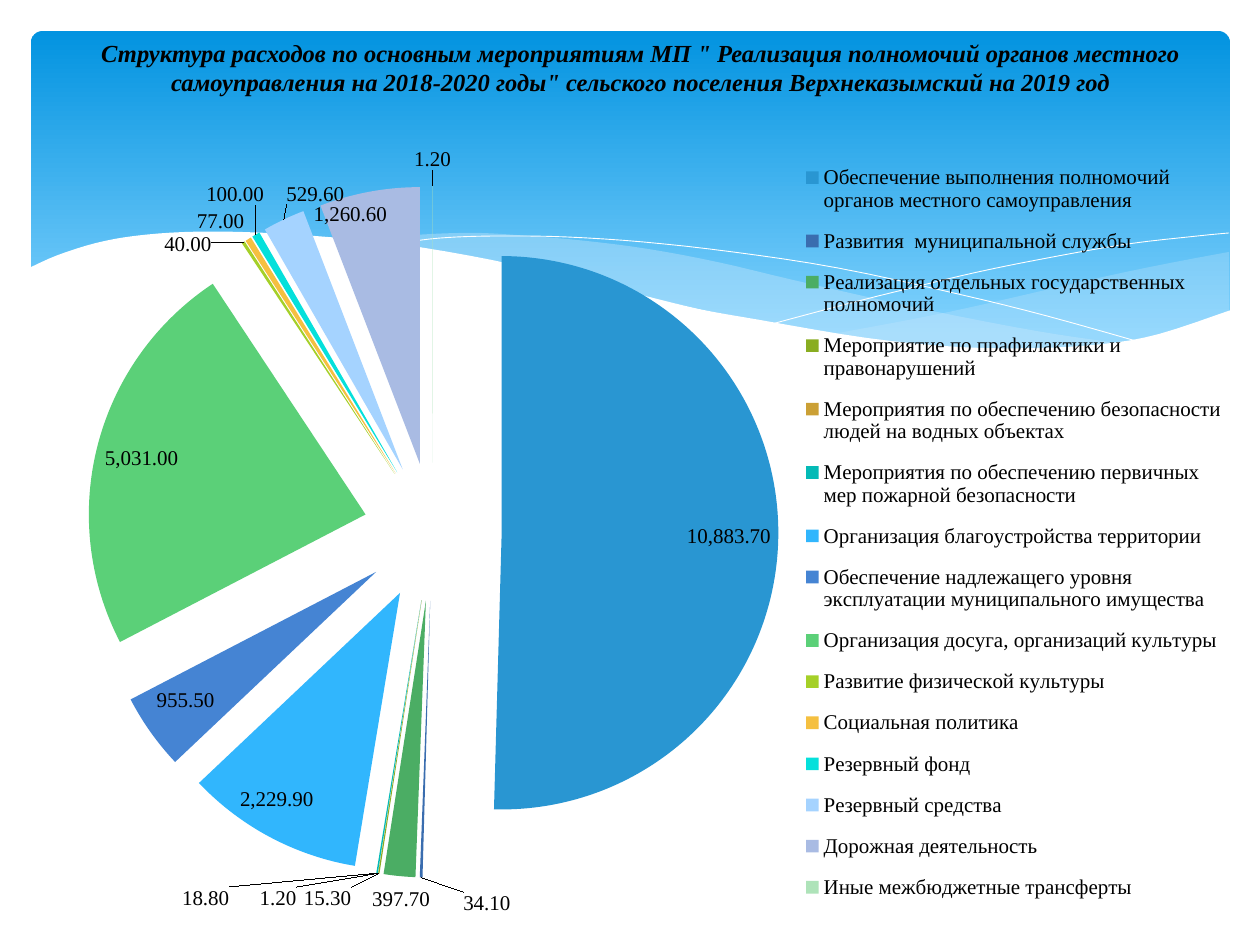
import dataclasses
import pptx
import pptx.chart.data
import pptx.dml.color
import pptx.enum.chart
import pptx.enum.shapes
import pptx.enum.text
import pptx.oxml
import pptx.oxml.ns
import pptx.util

PX = 914400 / 126
COLORS = {
    "top": "0293E0", "low": "83D3FE", "haze": "C6E7FC",
    "white": "FFFFFF", "black": "000000",
}
SERIF = {"name": "Times New Roman", "size": pptx.util.Pt(12)}
HEAD = {"name": "Times New Roman", "size": pptx.util.Pt(14), "bold": True, "italic": True}
FORMAT = "#,##0.00"
CHART = (35, 135, 1201, 794)
PIE = (87, 186, 692, 692)
LEGEND = (800, 148, 428, 770)
TITLE = (
    'Структура расходов по основным мероприятиям МП " Реализация полномочий органов '
    'местного самоуправления на 2018-2020 годы" сельского поселения Верхнеказымский на 2019 год'
)
Points = list[tuple[int, int]]


@dataclasses.dataclass
class Wave:
    curves: list[Points]
    fill: str = ""
    alpha: int = 100


@dataclasses.dataclass
class Slice:
    name: str
    value: float
    color: str
    inside: bool = False
    shift: tuple[int, int] = (0, 0)


WAVES = [
    Wave([[(1229, 252), (1160, 265), (1085, 281), (949, 312), (833, 334)],
          [(833, 334), (906, 343), (969, 348), (1026, 350), (1076, 348), (1120, 342),
           (1160, 335), (1196, 324), (1229, 311)]], "haze", 29),
    Wave([[(1125, 344), (1054, 334), (977, 320), (890, 302), (793, 280), (717, 262),
           (648, 249), (586, 241), (529, 236), (479, 233), (433, 234), (394, 237), (360, 241)],
          [(360, 241), (456, 256), (566, 280), (668, 302), (757, 321), (838, 335),
           (910, 345), (974, 350), (1031, 350), (1080, 349), (1125, 344)]], "haze", 40),
    Wave([[(389, 246), (422, 240), (457, 237), (505, 236), (567, 237), (643, 242),
           (733, 252), (838, 268), (958, 294), (1047, 316), (1143, 343)]]),
    Wave([[(772, 324), (847, 304), (907, 289), (978, 272), (1053, 257), (1128, 244),
           (1198, 236), (1229, 233)]]),
    Wave([[(29, 268), (58, 255), (96, 243), (134, 236), (184, 232), (243, 232), (315, 236),
           (398, 244), (492, 260), (563, 277), (633, 293), (699, 309), (760, 320), (867, 338),
           (959, 347), (1037, 348), (1103, 344), (1159, 334), (1231, 310)],
          [(1231, 415), (29, 415)]], "white"),
]
SLICES = [
    Slice("Обеспечение выполнения полномочий органов местного самоуправления", 10883.7, "2996D2", True),
    Slice("Развития  муниципальной службы", 34.1, "3A6DAF", False, (66, 7)),
    Slice("Реализация отдельных государственных полномочий", 397.7, "4BAD64", False, (31, 5)),
    Slice("Мероприятие по прафилактики и правонарушений", 15.3, "89AD21", False, (-27, 6)),
    Slice("Мероприятия по обеспечению безопасности людей на водных объектах", 1.2, "CBA035",
          False, (-81, 6)),
    Slice("Мероприятия по обеспечению первичных мер пожарной безопасности", 18.8, "04BAB6",
          False, (-146, 6)),
    Slice("Организация благоустройства территории", 2229.9, "31B6FD", True, (-34, -21)),
    Slice("Обеспечение надлежащего уровня эксплуатации муниципального имущества", 955.5, "4584D3",
          True, (0, -17)),
    Slice("Организация досуга, организаций культуры", 5031, "5BD078", True),
    Slice("Развитие физической культуры", 40, "A5D028", False, (-28, 19)),
    Slice("Социальная политика", 77, "F5C040"),
    Slice("Резервный фонд", 100, "05E0DB", False, (12, -22)),
    Slice("Резервный средства", 529.6, "A5D3FF", False, (64, -8)),
    Slice("Дорожная деятельность", 1260.6, "A9BBE3", False, (19, 41)),
    Slice("Иные межбюджетные трансферты", 1.2, "AEE3B9", False, (0, -8)),
]


def emu(*vals: float) -> list[int]:
    return [round(val * PX) for val in vals]


def rgb(name: str) -> pptx.dml.color.RGBColor:
    return pptx.dml.color.RGBColor.from_string(COLORS.get(name, name))


def style(font, form: dict) -> None:
    for key, val in form.items():
        setattr(font, key, val)
    font.color.rgb = rgb("black")


def node(tag: str, **attrs):
    item = pptx.oxml.parse_xml(f"<{tag} {pptx.oxml.ns.nsdecls(tag.split(':')[0])}/>")
    for key, val in attrs.items():
        item.set(key, str(val))
    return item


def smooth(pts: Points, steps: int = 4) -> list[tuple[float, float]]:
    """Sample a Catmull-Rom curve through the points."""
    if len(pts) < 3:
        return pts
    ends = [pts[0], *pts, pts[-1]]
    out = [pts[0]]
    for a, b, c, d in zip(ends, ends[1:], ends[2:], ends[3:]):
        for step in range(1, steps + 1):
            t = step / steps
            out.append(tuple(
                (2 * q + (r - p) * t + (2 * p - 5 * q + 4 * r - s) * t ** 2
                 + (3 * q - p - 3 * r + s) * t ** 3) / 2
                for p, q, r, s in zip(a, b, c, d)))
    return out


def draw_wave(shapes, wave: Wave) -> None:
    pts = [emu(*pt) for curve in wave.curves for pt in smooth(curve)]
    path = shapes.build_freeform(*pts[0], scale=1.0)
    path.add_line_segments(pts[1:], close=bool(wave.fill))
    shape = path.convert_to_shape()
    shape.shadow.inherit = False
    if not wave.fill:
        shape.fill.background()
        shape.line.color.rgb = rgb("white")
        shape.line.width = pptx.util.Pt(0.5)
        return
    shape.line.fill.background()
    shape.fill.solid()
    shape.fill.fore_color.rgb = rgb(wave.fill)
    if wave.alpha < 100:
        tint = shape._element.spPr.find(".//" + pptx.oxml.ns.qn("a:srgbClr"))
        tint.append(node("a:alpha", val=wave.alpha * 1000))


def draw_panel(shapes) -> None:
    kind = pptx.enum.shapes.MSO_SHAPE.ROUNDED_RECTANGLE
    panel = shapes.add_shape(kind, *emu(31, 31, 1199, 340))
    panel.adjustments[0] = 0.034
    panel.shadow.inherit = False
    panel.line.fill.background()
    panel.fill.gradient()
    panel.fill.gradient_angle = 270
    for stop, name, pos in zip(panel.fill.gradient_stops, ("top", "low"), (0, 0.9)):
        stop.color.rgb = rgb(name)
        stop.position = pos


def draw_title(shapes) -> None:
    frame = shapes.add_textbox(*emu(74, 31, 1134, 90)).text_frame
    frame.word_wrap = True
    para = frame.paragraphs[0]
    para.alignment = pptx.enum.text.PP_ALIGN.CENTER
    para.line_spacing = pptx.util.Pt(17)
    run = para.add_run()
    run.text = TITLE
    style(run.font, HEAD)


def layout(**vals):
    """Make a manual chart layout from its values."""
    root = node("c:layout")
    manual = node("c:manualLayout")
    root.append(manual)
    for key, val in vals.items():
        manual.append(node(f"c:{key}", val=val))
    return root


def place(parent, box: tuple[int, int, int, int], index: int, **modes) -> None:
    for old in parent.findall(pptx.oxml.ns.qn("c:layout")):
        parent.remove(old)
    left, top, wide, high = CHART
    x, y, w, h = box
    parent.insert(index, layout(
        **modes, xMode="edge", yMode="edge", x=round((x - left) / wide, 3),
        y=round((y - top) / high, 3), w=round(w / wide, 3), h=round(h / high, 3)))


def draw_slice(point, part: Slice) -> None:
    point.format.fill.solid()
    point.format.fill.fore_color.rgb = rgb(part.color)
    point.format.line.fill.background()
    spot = pptx.enum.chart.XL_LABEL_POSITION
    label = point.data_label
    style(label.font, SERIF)
    label.position = spot.INSIDE_END if part.inside else spot.OUTSIDE_END
    item = label._get_or_add_dLbl()
    item.insert(1, node("c:numFmt", formatCode=FORMAT, sourceLinked=0))
    if any(part.shift):
        x, y = part.shift
        item.insert(1, layout(x=round(x / CHART[2], 3), y=round(y / CHART[3], 3)))


def draw_chart(shapes) -> None:
    data = pptx.chart.data.CategoryChartData(number_format=FORMAT)
    data.categories = [part.name for part in SLICES]
    data.add_series("Series 1", [part.value for part in SLICES])
    kind = pptx.enum.chart.XL_CHART_TYPE.PIE
    chart = shapes.add_chart(kind, *emu(*CHART), data).chart
    style(chart.font, {"name": "Calibri", "size": pptx.util.Pt(10)})
    chart.has_title = False
    chart.has_legend = True
    chart.legend.include_in_layout = False
    style(chart.legend.font, SERIF)
    place(chart.legend._element, LEGEND, 1)
    place(chart._chartSpace.chart.plotArea, PIE, 0, layoutTarget="inner")
    chart.plots[0].vary_by_categories = True
    series = chart.plots[0].series[0]
    labels = series.data_labels
    for key, val in {"show_value": True, "number_format": FORMAT,
                     "number_format_is_linked": False}.items():
        setattr(labels, key, val)
    style(labels.font, SERIF)
    for index, part in enumerate(SLICES):
        draw_slice(series.points[index], part)
    first = series._element.find(pptx.oxml.ns.qn("c:dPt"))
    first.addprevious(node("c:explosion", val=25))


def main() -> None:
    deck = pptx.Presentation()
    deck.slide_width, deck.slide_height = emu(1260, 945)
    shapes = deck.slides.add_slide(deck.slide_layouts[6]).shapes
    draw_panel(shapes)
    for wave in WAVES:
        draw_wave(shapes, wave)
    draw_title(shapes)
    draw_chart(shapes)
    deck.save("out.pptx")


if __name__ == "__main__":
    main()
